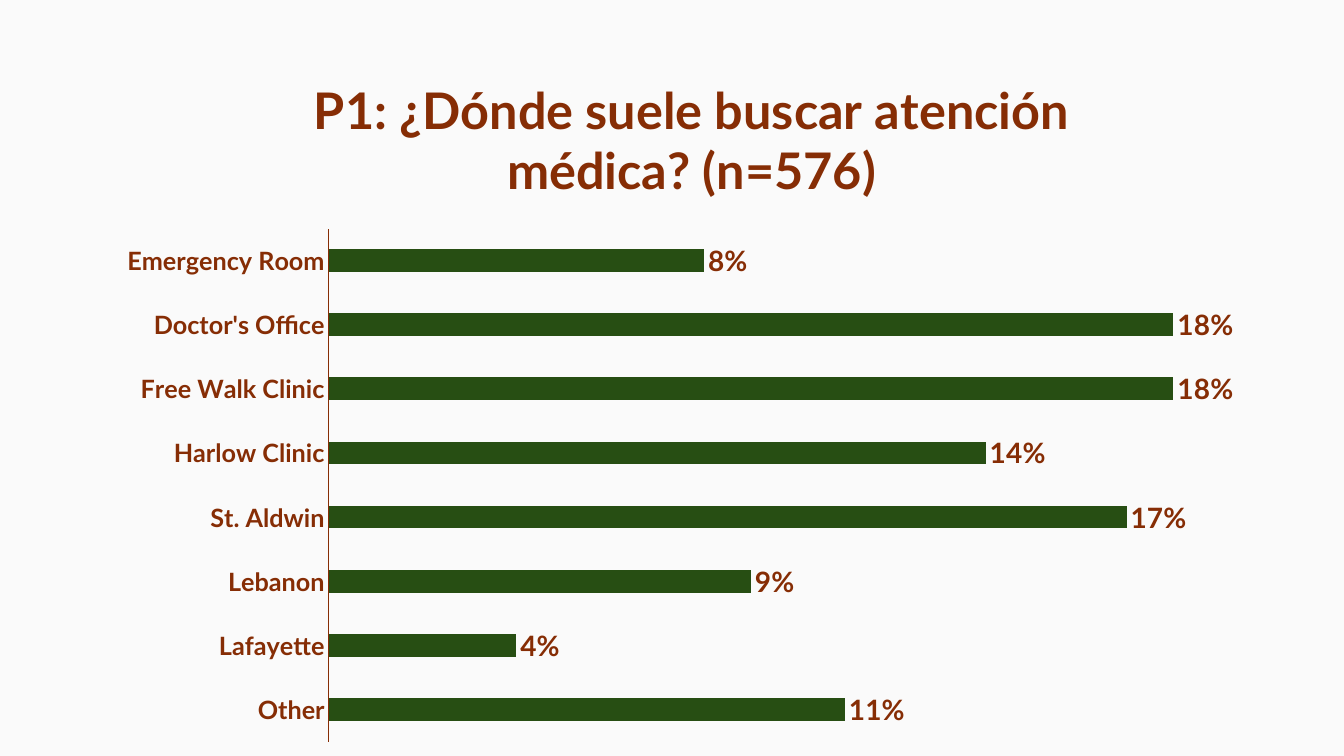
from lxml.etree import SubElement
from pptx import Presentation
from pptx.chart.data import CategoryChartData as ChartData
from pptx.dml.color import RGBColor
from pptx.enum.chart import XL_CHART_TYPE as ChartType
from pptx.enum.chart import XL_LABEL_POSITION as LabelPosition
from pptx.enum.chart import XL_TICK_LABEL_POSITION as TickLabels
from pptx.enum.chart import XL_TICK_MARK as TickMark
from pptx.oxml.ns import qn
from pptx.util import Cm, Pt

RUST = RGBColor(0x86, 0x2D, 0x05)
GREEN = RGBColor(0x27, 0x4E, 0x13)
PAPER = RGBColor(0xFA, 0xFA, 0xFA)

QUESTION = "P1: ¿Dónde suele buscar atención médica? (n=576)"
CARE_SHARES = {
    "Emergency Room": 0.08,
    "Doctor's Office": 0.18,
    "Free Walk Clinic": 0.18,
    "Harlow Clinic": 0.14,
    "St. Aldwin": 0.17,
    "Lebanon": 0.09,
    "Lafayette": 0.04,
    "Other": 0.11,
}


def format_font(font, size, color=RUST, bold=True, name="Lato"):
    font.size = Pt(size)
    font.color.rgb = color
    font.bold = bold
    font.name = name


def write_text(frame, text, **style):
    run = frame.paragraphs[0].add_run()
    run.text = text
    format_font(run.font, **style)


def place(parent, index, **fractions):
    for old in parent.findall(qn("c:layout")):
        parent.remove(old)
    layout = SubElement(parent, qn("c:layout"))
    parent.insert(index, layout)
    manual = SubElement(layout, qn("c:manualLayout"))
    if "w" in fractions:
        SubElement(manual, qn("c:layoutTarget")).set("val", "inner")
    for side in "xy":
        SubElement(manual, qn(f"c:{side}Mode")).set("val", "edge")
    for side, fraction in fractions.items():
        SubElement(manual, qn(f"c:{side}")).set("val", str(fraction))


def add_share_chart(slide):
    shares = ChartData(number_format="0%")
    shares.categories = list(CARE_SHARES)
    shares.add_series("Series 1", list(CARE_SHARES.values()))
    chart = slide.shapes.add_chart(
        ChartType.BAR_CLUSTERED, Cm(2.59), Cm(1.09), Cm(29.95), Cm(17.96), shares
    ).chart
    chart.has_legend = False
    format_font(chart.font, 10, bold=False, name="Arial")
    return chart


def add_question(chart):
    heading = chart.chart_title
    write_text(heading.text_frame, QUESTION, size=36)
    heading.include_in_layout = False
    place(heading._element, 1, x=0.17, y=0.03)


def format_axes(chart):
    places = chart.category_axis
    places.reverse_order = True
    places.major_tick_mark = TickMark.NONE
    places.minor_tick_mark = TickMark.NONE
    places.tick_label_position = TickLabels.NEXT_TO_AXIS
    places.tick_labels.offset = 0
    places.format.line.color.rgb = RUST
    places.format.line.width = Pt(0.75)
    format_font(places.tick_labels.font, 18)

    percent = chart.value_axis
    percent.minimum_scale = 0
    percent.maximum_scale = 0.2
    percent.has_major_gridlines = False
    percent.visible = False


def format_bars(chart):
    bars = chart.plots[0]
    bars.gap_width = 182
    bars.vary_by_categories = False
    fill = bars.series[0].format.fill
    fill.solid()
    fill.fore_color.rgb = GREEN

    labels = bars.series[0].data_labels
    labels.show_value = True
    labels.position = LabelPosition.OUTSIDE_END
    labels.number_format = "0%"
    labels.number_format_is_linked = False
    format_font(labels.font, 20)
    place(bars._element.getparent(), 0, x=0.19, y=0.26, w=0.79, h=0.72)


def main():
    deck = Presentation()
    deck.slide_width, deck.slide_height = Cm(33.87), Cm(19.05)
    slide = deck.slides.add_slide(deck.slide_layouts[6])
    slide.background.fill.solid()
    slide.background.fill.fore_color.rgb = PAPER
    chart = add_share_chart(slide)
    add_question(chart)
    format_axes(chart)
    format_bars(chart)
    deck.save("out.pptx")


if __name__ == "__main__":
    main()
